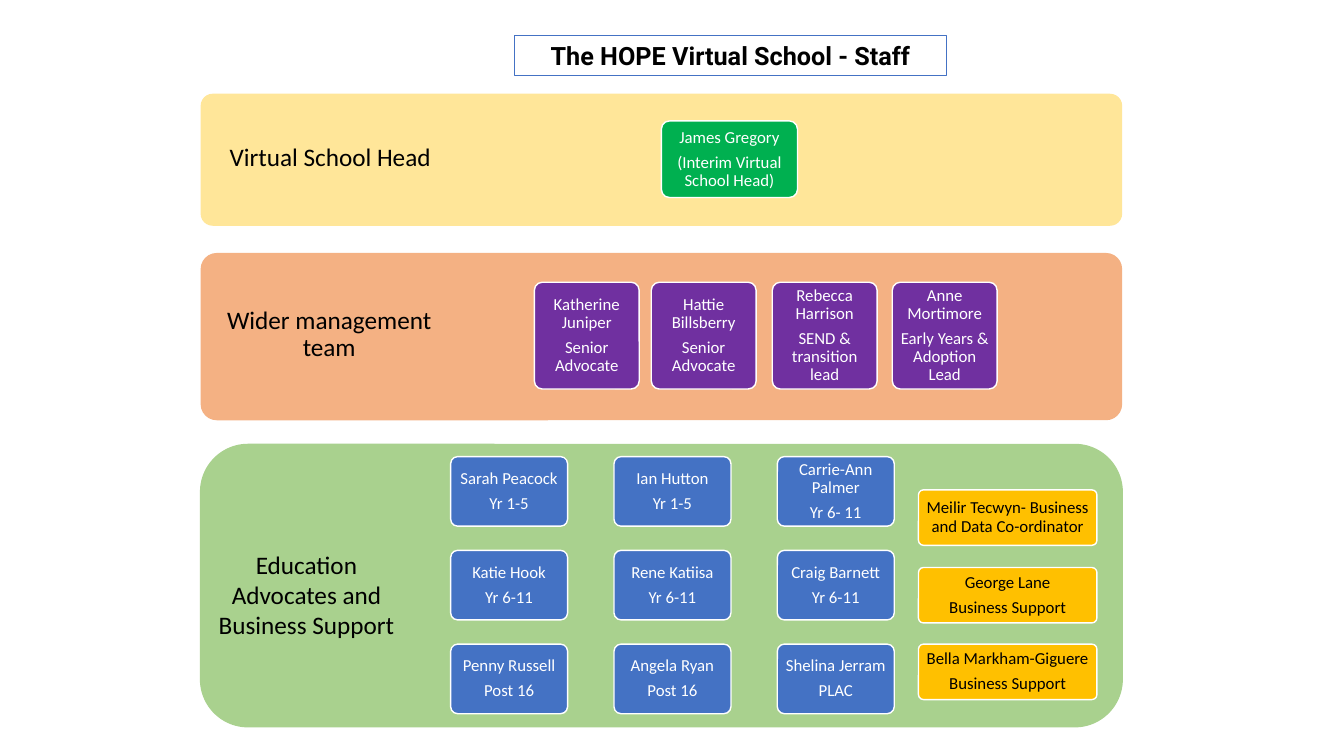
from pptx import Presentation
from pptx.dml.color import RGBColor
from pptx.enum.shapes import MSO_SHAPE
from pptx.enum.text import MSO_ANCHOR, PP_ALIGN
from pptx.util import Pt

PX = 9144  # EMU per px, 100 px to the inch


def rgb(color):
    return RGBColor.from_string(color)


def add_card(x, y, w, h, radius, fill, line=None, lines=(), color="FFFFFF"):
    """Add a rounded rectangle holding one paragraph per line."""
    sp = slide.shapes.add_shape(
        MSO_SHAPE.ROUNDED_RECTANGLE, x * PX, y * PX, w * PX, h * PX)
    sp.adjustments[0] = radius / min(w, h)
    sp.shadow.inherit = False
    sp.fill.solid()
    sp.fill.fore_color.rgb = rgb(fill)
    if line:
        sp.line.color.rgb = rgb(line)
        sp.line.width = Pt(1)
    else:
        sp.line.fill.background()
    tf = sp.text_frame
    tf.word_wrap = True
    tf.vertical_anchor = MSO_ANCHOR.MIDDLE
    tf.margin_left = tf.margin_right = tf.margin_top = tf.margin_bottom = 6 * PX
    if lines:
        tf.text = "\n".join(lines)
        for p in tf.paragraphs:
            p.alignment = PP_ALIGN.CENTER
            p.line_spacing = 0.9
            p.space_after = Pt(5)
            p.font.name = "Calibri"
            p.font.size = Pt(12)
            p.font.color.rgb = rgb(color)


prs = Presentation()
prs.slide_width, prs.slide_height = 1333 * PX, 750 * PX
slide = prs.slides.add_slide(prs.slide_layouts[5])

# Title
title = slide.shapes.title
title.left, title.top, title.width, title.height = 510 * PX, 35 * PX, 429 * PX, 40 * PX
title.line.color.rgb = rgb("4472C4")
title.line.width = Pt(0.75)
title.text_frame.text = "The HOPE Virtual School - Staff"
p = title.text_frame.paragraphs[0]
p.alignment = PP_ALIGN.CENTER
p.font.name = "Roboto"
p.font.size = Pt(18)
p.font.bold = True
p.font.color.rgb = rgb("000000")

# Bands
for y, h, radius, fill, line in [
    (251, 166, 16, "F4B183", None),
    (93, 131, 12, "FFE699", None),
    (441, 280, 47, "A9D18E", "A9D18E"),
]:
    add_card(199, y, 914, h, radius, fill, line)

# Virtual school head
add_card(656, 120, 135, 76, 8, "00B050", "FFFFFF",
         ["James Gregory", "(Interim Virtual School Head)"])

# Wider management team
managers = [
    (530, "Katherine Juniper", "Senior Advocate"),
    (646, "Hattie Billsberry", "Senior Advocate"),
    (766, "Rebecca Harrison", "SEND & transition lead"),
    (885, "Anne Mortimore", "Early Years & Adoption Lead"),
]
for x, *lines in managers:
    add_card(x, 280, 104, 106, 8, "7030A0", "FFFFFF", lines)

# Education advocates
advocates = [
    [("Sarah Peacock", "Yr 1-5"), ("Ian Hutton", "Yr 1-5"), ("Carrie-Ann Palmer", "Yr 6- 11")],
    [("Katie Hook", "Yr 6-11"), ("Rene Katiisa", "Yr 6-11"), ("Craig Barnett", "Yr 6-11")],
    [("Penny Russell", "Post 16"), ("Angela Ryan", "Post 16"), ("Shelina Jerram", "PLAC")],
]
for row, people in enumerate(advocates):
    for col, lines in enumerate(people):
        add_card(447 + 162 * col, 453 + 93 * row, 116, 69, 7, "4472C4", "FFFFFF", lines)

# Business support
support = [
    (486, "Meilir Tecwyn- Business and Data Co-ordinator"),
    (563, "George Lane", "Business Support"),
    (639, "Bella Markham-Giguere", "Business Support"),
]
for y, *lines in support:
    add_card(911, y, 177, 55, 5, "FFC000", "FFFFFF", lines, "000000")

# Band labels
for x, y, w, h, spacing, lines in [
    (199, 540, 210, 101, 1.0, ["Education", "Advocates and Business Support"]),
    (200, 139, 255, 37, 0.9, ["Virtual School Head"]),
    (199, 300, 255, 65, 0.9, ["Wider management team"]),
]:
    tf = slide.shapes.add_textbox(x * PX, y * PX, w * PX, h * PX).text_frame
    tf.word_wrap = True
    tf.text = "\n".join(lines)
    for p in tf.paragraphs:
        p.alignment = PP_ALIGN.CENTER
        p.line_spacing = spacing
        p.font.name = "Calibri"
        p.font.size = Pt(18)
        p.font.color.rgb = rgb("000000")

prs.save("out.pptx")
